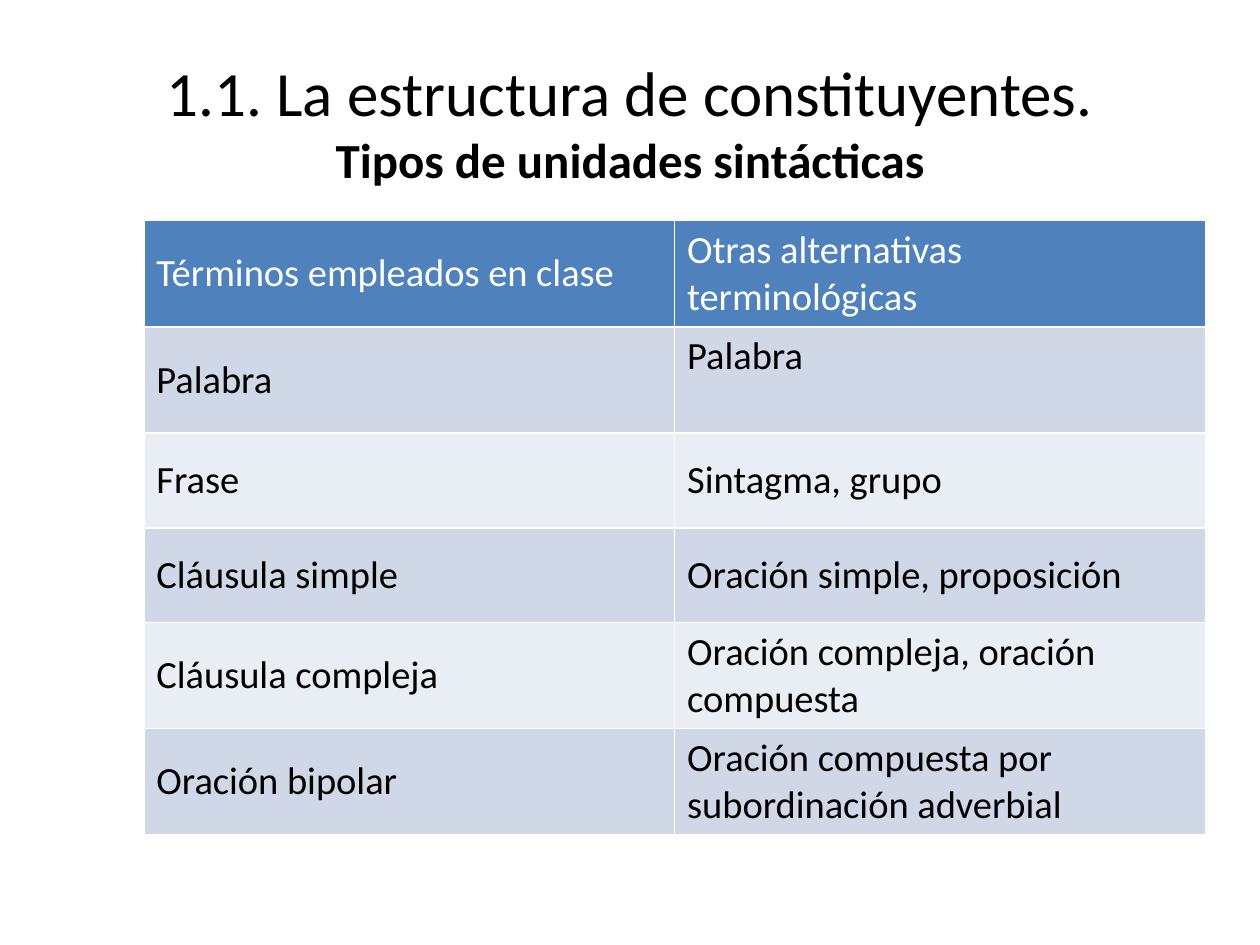
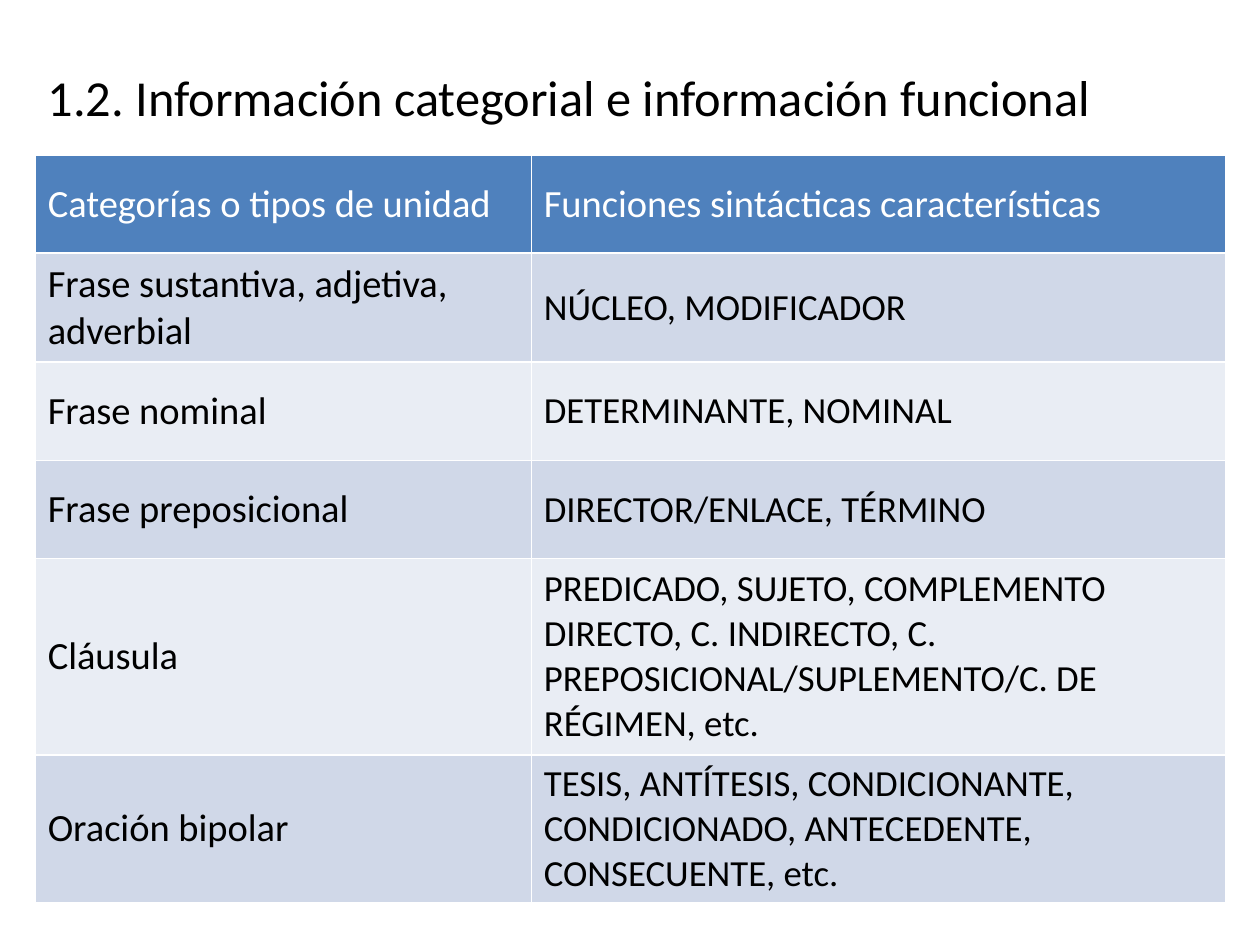
from pptx import Presentation
from pptx.dml import color
from pptx.enum import text
from pptx.util import Cm, Pt

FONT = "Calibri"
BLACK, WHITE = "000000", "FFFFFF"
HEAD = "4F81BD"
BANDS = "D0D8E8", "E9EDF4"

TERMS = [
    ("Términos empleados en clase", "Otras alternativas terminológicas"),
    ("Palabra", "Palabra"),
    ("Frase", "Sintagma, grupo"),
    ("Cláusula simple", "Oración simple, proposición"),
    ("Cláusula compleja", "Oración compleja, oración compuesta"),
    ("Oración bipolar", "Oración compuesta por subordinación adverbial"),
]
ROLES = [
    ("Categorías o tipos de unidad", "Funciones sintácticas características"),
    ("Frase sustantiva, adjetiva, adverbial", "NÚCLEO, MODIFICADOR"),
    ("Frase nominal", "DETERMINANTE, NOMINAL"),
    ("Frase preposicional", "DIRECTOR/ENLACE, TÉRMINO"),
    ("Cláusula", "PREDICADO, SUJETO, COMPLEMENTO DIRECTO, C. INDIRECTO, "
                 "C. PREPOSICIONAL/SUPLEMENTO/C. DE RÉGIMEN, etc."),
    ("Oración bipolar", "TESIS, ANTÍTESIS, CONDICIONANTE, CONDICIONADO, "
                        "ANTECEDENTE, CONSECUENTE, etc."),
]


def paint(target, code):
    target.rgb = color.RGBColor.from_string(code)


def style(font, size, code=BLACK, bold=False):
    font.name, font.size, font.bold = FONT, Pt(size), bold
    paint(font.color, code)


def add_title(slide, box, lines, align):
    frame = slide.shapes.add_textbox(*map(Cm, box)).text_frame
    frame.word_wrap = True
    frame.vertical_anchor = text.MSO_ANCHOR.MIDDLE
    para = frame.paragraphs[0]
    para.alignment = align
    for i, (words, size, bold) in enumerate(lines):
        if i:
            para.add_line_break()
        run = para.add_run()
        run.text = words
        style(run.font, size, bold=bold)


def add_grid(slide, left, top, cols, rows, data, size):
    frame = slide.shapes.add_table(
        len(rows), len(cols), Cm(left), Cm(top), Cm(sum(cols)), Cm(sum(rows)))
    table = frame.table
    for col, width in zip(table.columns, cols):
        col.width = Cm(width)
    for r, (high, words) in enumerate(zip(rows, data)):
        table.rows[r].height = Cm(high)
        for c, word in enumerate(words):
            cell = table.cell(r, c)
            cell.text = word
            cell.vertical_anchor = text.MSO_ANCHOR.MIDDLE
            cell.fill.solid()
            paint(cell.fill.fore_color, BANDS[(r - 1) % 2] if r else HEAD)
            style(cell.text_frame.paragraphs[0].font,
                  size if r and c else 22, BLACK if r else WHITE)
    return table


def add_terms(slide):
    add_title(slide, (1.27, 0.76, 22.86, 3.35),
              [("1.1. La estructura de constituyentes.", 36, False),
               ("Tipos de unidades sintácticas", 28, True)],
              text.PP_ALIGN.CENTER)
    tall, low = 2.14, 1.91
    table = add_grid(slide, 2.9, 4.45, [10.7] * 2,
                     [tall, tall, low, low, tall, tall], TERMS, 22)
    table.cell(1, 1).vertical_anchor = text.MSO_ANCHOR.TOP


def add_roles(slide):
    add_title(slide, (0.71, 0.76, 23.42, 2.36),
              [("1.2. Información categorial e información funcional", 28.8, False)],
              text.PP_ALIGN.LEFT)
    unit = 1.98
    add_grid(slide, 0.71, 3.12, [10, 14],
             [unit, 2.2, unit, unit, 2 * unit, 1.5 * unit], ROLES, 21)


def main():
    deck = Presentation()
    deck.slide_width, deck.slide_height = Cm(25.4), Cm(19.05)
    for build in add_terms, add_roles:
        build(deck.slides.add_slide(deck.slide_layouts[6]))
    deck.save("out.pptx")


if __name__ == "__main__":
    main()
